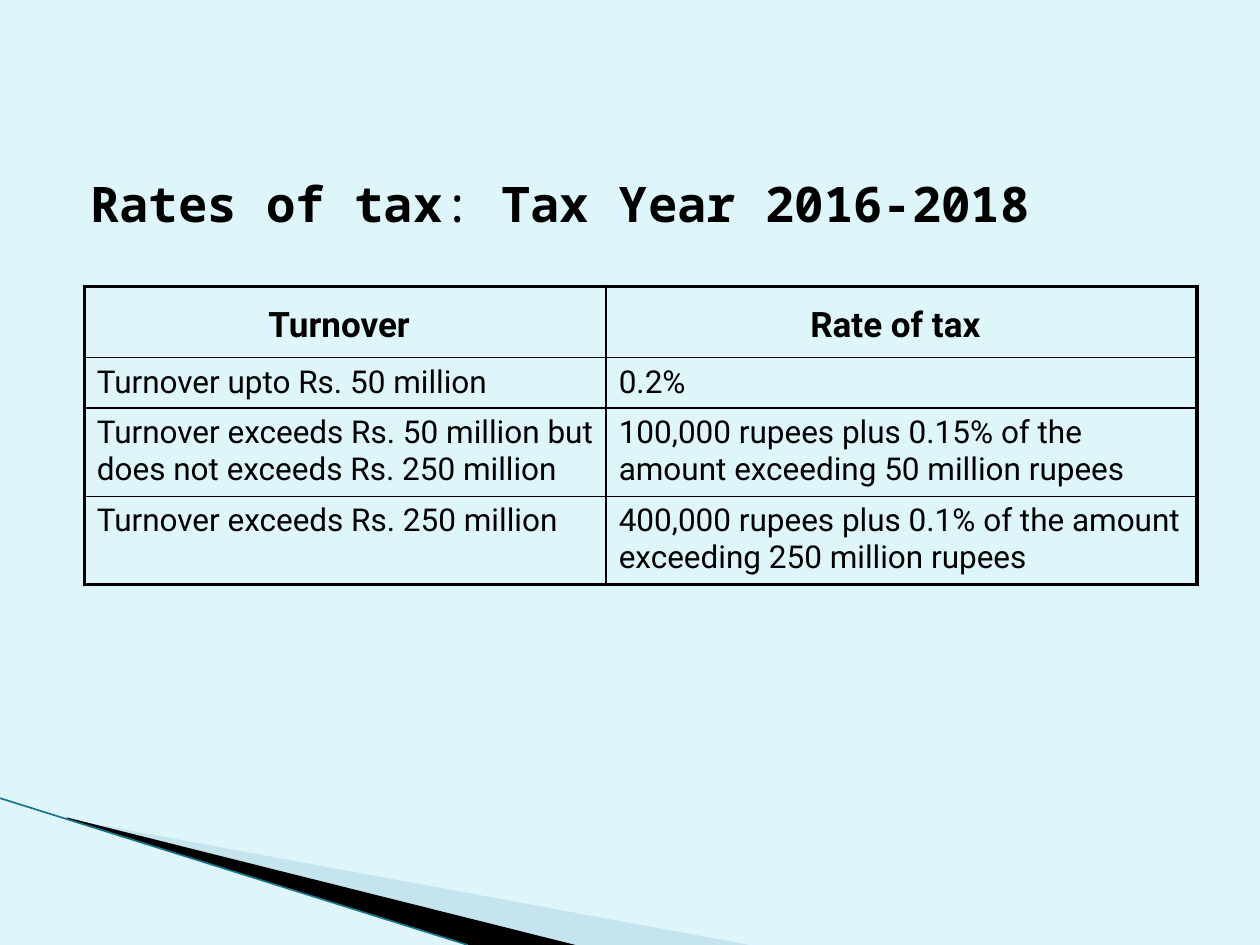
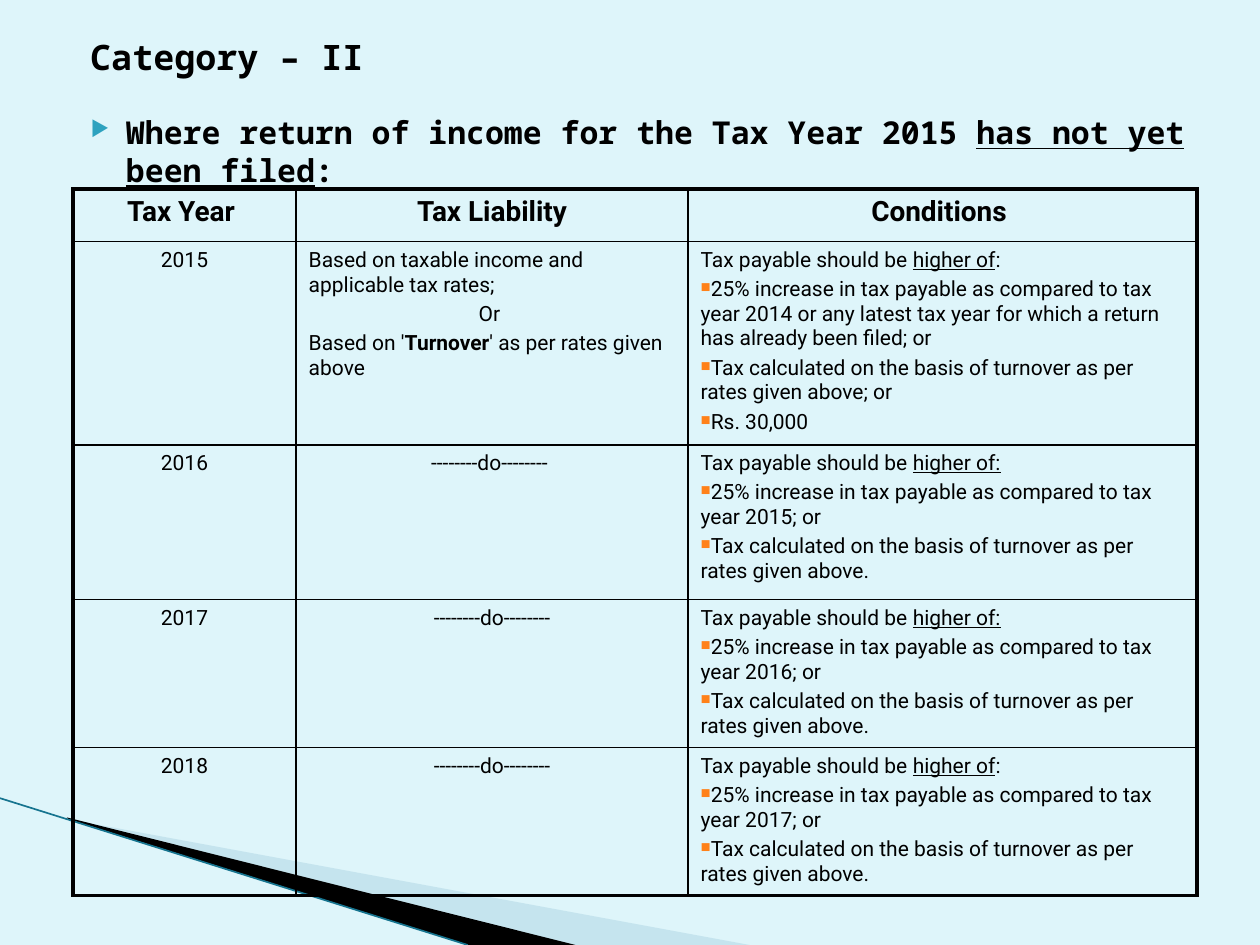
from lxml.etree import SubElement
from pptx import Presentation
from pptx.dml.color import RGBColor
from pptx.enum.shapes import MSO_CONNECTOR
from pptx.enum.text import PP_ALIGN
from pptx.oxml.ns import qn
from pptx.util import Cm, Pt

COLORS = {
    "page": "DEF5FA",
    "ink": "000000",
    "band": "A0CBDC",
    "edge": "16748F",
    "arrow": "2DA2BF",
    "square": "FF8119",
}
TITLE_FONT = "Noto Sans Mono"
TABLE_FONT = "Roboto"
THICK, THIN = Pt(2.25), Pt(1)
CENTER, LEFT = PP_ALIGN.CENTER, PP_ALIGN.LEFT


def rgb(name):
    return RGBColor.from_string(COLORS[name])


def add_spans(para, spans, font, size, bold=False):
    """Add (text, marks) runs: "b" bold, "u" underlined, "L" 28 pt."""
    for text, marks in spans:
        span = para.add_run()
        span.text = text
        span.font.name = font
        span.font.size = Pt(28) if "L" in marks else Pt(size)
        span.font.bold = bold or "b" in marks
        span.font.underline = "u" in marks
        span.font.color.rgb = rgb("ink")


def add_bullet(para, symbol, color, percent):
    props = para._p.get_or_add_pPr()
    tint = SubElement(props, qn("a:buClr"))
    SubElement(tint, qn("a:srgbClr"), val=COLORS[color])
    SubElement(props, qn("a:buSzPct"), val=str(percent * 1000))
    SubElement(props, qn("a:buChar"), char=symbol)


def add_wedge(page, points, color, opacity=100):
    corners = [(Cm(x), Cm(y)) for x, y in points]
    builder = page.shapes.build_freeform(*corners[0], scale=1.0)
    builder.add_line_segments(corners[1:], close=True)
    wedge = builder.convert_to_shape()
    wedge.shadow.inherit = False
    wedge.fill.solid()
    wedge.fill.fore_color.rgb = rgb(color)
    wedge.line.fill.background()
    if opacity < 100:
        tint = wedge.fill._xPr.find(qn("a:solidFill"))[0]
        SubElement(tint, qn("a:alpha"), val=str(opacity * 1000))


def add_page(deck):
    """Add a blank page with the shared background and corner wedges."""
    page = deck.slides.add_slide(deck.slide_layouts[6])
    page.background.fill.solid()
    page.background.fill.fore_color.rgb = rgb("page")
    bottom = 19.05
    add_wedge(page, [(1.4, 16.52), (15.11, bottom), (11.58, bottom)], "band", 40)
    add_wedge(page, [(1.35, 16.48), (11.6, bottom), (9.45, bottom), (1.37, 16.51)], "ink")
    edge = page.shapes.add_connector(
        MSO_CONNECTOR.STRAIGHT, 0, Cm(16.09), Cm(9.43), Cm(bottom))
    edge.line.color.rgb = rgb("edge")
    edge.line.width = Pt(0.95)
    SubElement(edge._element.spPr, qn("a:effectLst"))
    return page


def add_heading(page, top, height, spans, size):
    """Add the heading box and return its text frame."""
    box = page.shapes.add_textbox(Cm(1.27), Cm(top), Cm(23.29), Cm(height))
    frame = box.text_frame
    frame.word_wrap = True
    para = frame.paragraphs[0]
    para._p.get_or_add_pPr().set("marL", str(Cm(0.3)))
    add_spans(para, spans, TITLE_FONT, size)
    return frame


def set_borders(cell, widths):
    """Draw the left, right, top and bottom borders."""
    props = cell._tc.get_or_add_tcPr()
    for side, width in zip("LRTB", widths):
        line = SubElement(props, qn(f"a:ln{side}"), w=str(width))
        fill = SubElement(line, qn("a:solidFill"))
        SubElement(fill, qn("a:srgbClr"), val=COLORS["ink"])


def fill_cell(cell, paras, size, bold):
    """Write (align, bulleted, spans) paragraphs into a cell."""
    frame = cell.text_frame
    for index, (align, bulleted, spans) in enumerate(paras):
        para = frame.add_paragraph() if index else frame.paragraphs[0]
        if bulleted:
            add_bullet(para, "■", "square", 65)
        para.alignment = align
        if index:
            para.space_before = Pt(2.7)
        add_spans(para, spans, TABLE_FONT, size, bold)


def add_grid(page, left, top, widths, heights, rows, head_size, body_size):
    """Add an unfilled table with a thick outer frame."""
    frame = page.shapes.add_table(
        len(heights), len(widths), Cm(left), Cm(top), Cm(sum(widths)), Cm(sum(heights)))
    table = frame.table
    table.first_row = table.horz_banding = False
    for column, width in zip(table.columns, widths):
        column.width = Cm(width)
    for row, height in zip(table.rows, heights):
        row.height = Cm(height)
    last_row, last_column = len(heights) - 1, len(widths) - 1
    for r, row in enumerate(rows):
        for c, paras in enumerate(row):
            cell = table.cell(r, c)
            outer = (c == 0, c == last_column, r == 0, r == last_row)
            set_borders(cell, [THICK if is_outer else THIN for is_outer in outer])
            cell.fill.background()
            fill_cell(cell, paras, body_size if r else head_size, r == 0)


def line(text, align=LEFT, bulleted=False):
    return align, bulleted, [(text, "")]


def build_rates_page(deck):
    page = add_page(deck)
    add_heading(page, 3.38, 1.5, [
        ("Rates of tax", "b"), (": ", ""), ("Tax Year 2016-2018", "b")], 28)
    header = [[(CENTER, False, [(text, ""), (" ", "L")])]
              for text in ("Turnover", "Rate of tax")]
    rates = [
        ("Turnover upto Rs. 50 million", "0.2%"),
        ("Turnover exceeds Rs. 50 million but does not exceeds Rs. 250 million",
         "100,000 rupees plus 0.15% of the amount exceeding 50 million rupees"),
        ("Turnover exceeds Rs. 250 million",
         "400,000 rupees plus 0.1% of the amount exceeding 250 million rupees"),
    ]
    body = [[[line(text)] for text in rate] for rate in rates]
    add_grid(page, 1.7, 5.77, [10.52, 11.91], [1.41, 1.01, 1.75, 1.74],
             [header] + body, 20, 18)


def conditions(higher_of, compared, ending, *more):
    """Return the paragraphs of one cell in the Conditions column."""
    points = [
        f"25% increase in tax payable as compared to tax year {compared}; or",
        f"Tax calculated on the basis of turnover as per rates given above{ending}",
        *more,
    ]
    return [(LEFT, False, [("Tax payable should be ", ""), *higher_of])] + [
        line(point, bulleted=True) for point in points]


def build_category_page(deck):
    page = add_page(deck)
    frame = add_heading(page, 0.6, 4, [("Category – II", "b")], 20)
    para = frame.add_paragraph()
    props = para._p.get_or_add_pPr()
    props.set("marL", str(Cm(1.02)))
    props.set("indent", str(Cm(-0.71)))
    add_bullet(para, "▶", "arrow", 68)
    para.space_before = Pt(20)
    add_spans(para, [
        ("Where return of income for the Tax Year 2015 ", ""),
        ("has not yet been filed", "u"), (":", "")], TITLE_FONT, 18, bold=True)

    plain_colon = [("higher of", "u"), (":", "")]
    underlined_colon = [("higher of:", "u")]
    liability = [
        line("Based on taxable income and applicable tax rates;"),
        line("Or ", CENTER),
        (LEFT, False, [("Based on '", ""), ("Turnover", "b"),
                       ("' as per rates given above", "")]),
    ]
    ditto = "--------do--------"
    years = [
        ("2015", liability, conditions(
            plain_colon, "2014 or any latest tax year for which a return has already been filed",
            "; or", "Rs. 30,000")),
        ("2016", [line(ditto + " ", CENTER)], conditions(underlined_colon, 2015, ".")),
        ("2017", [line(ditto, CENTER)], conditions(underlined_colon, 2016, ".")),
        ("2018", [line(ditto, CENTER)], conditions(plain_colon, 2017, ".")),
    ]
    header = [[line(text, CENTER)] for text in ("Tax Year ", "Tax Liability", "Conditions ")]
    body = [[[line(year, CENTER)], *cells] for year, *cells in years]
    add_grid(page, 1.47, 3.81, [4.5, 7.9, 10.26], [1.06, 4.04, 3.12, 2.9, 2.9],
             [header] + body, 16, 12)


def main():
    deck = Presentation()
    deck.slide_width, deck.slide_height = Cm(25.4), Cm(19.05)
    build_rates_page(deck)
    build_category_page(deck)
    deck.save("out.pptx")


if __name__ == "__main__":
    main()
